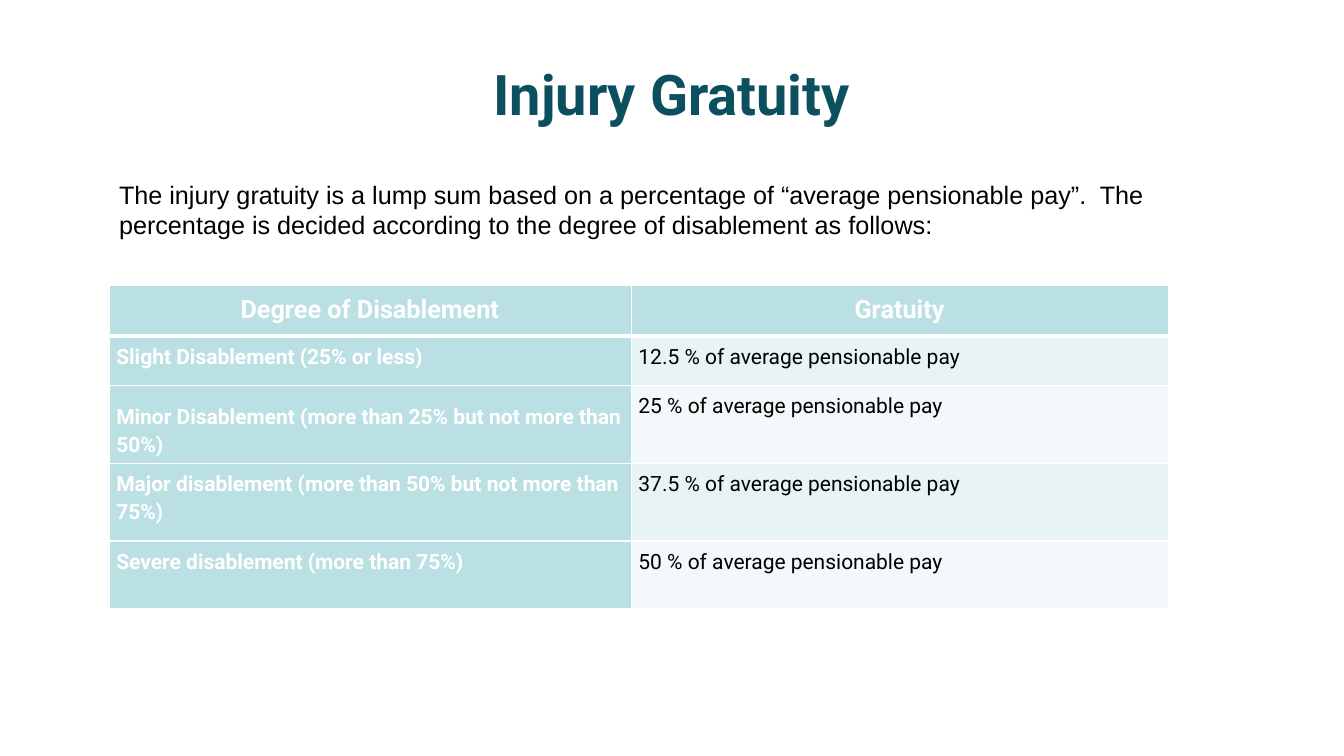
from lxml import etree
from pptx import Presentation
from pptx import util as u
from pptx.dml.color import RGBColor
from pptx.enum import text
from pptx.oxml import ns

COLORS = {
    "title": "0C5060",
    "body": "000000",
    "white": "FFFFFF",
    "header": "BBE0E3",
    "band_dark": "E7F3F4",
    "band_light": "F3F9FA",
}
INTRO = (
    "The injury gratuity is a lump sum based on a percentage of “average pensionable pay”.  "
    "The percentage is decided according to the degree of disablement as follows:"
)
ROWS = [
    ("Degree of Disablement", "Gratuity"),
    ("Slight Disablement (25% or less)", "12.5 % of average pensionable pay"),
    ("Minor Disablement (more than 25% but not more than 50%)", "25 % of average pensionable pay"),
    ("Major disablement (more than 50% but not more than 75%)", "37.5 % of average pensionable pay"),
    ("Severe disablement (more than 75%)", "50 % of average pensionable pay"),
]
BOTTOM_ROW = 2
COL_WIDTHS = (13.16, 13.54)
ROW_HEIGHTS = (1.27, 1.24, 1.96, 1.96, 1.7)


def rgb(name):
    return RGBColor.from_string(COLORS[name])


def style(p, font, size, color, bold=False):
    p.font.name = font
    p.font.size = u.Pt(size)
    p.font.bold = bold
    p.font.color.rgb = rgb(color)


def add_text(s, box, content, font, size, color, bold=False, align=text.PP_ALIGN.LEFT):
    tf = s.shapes.add_textbox(*map(u.Cm, box)).text_frame
    tf.word_wrap = True
    tf.vertical_anchor = text.MSO_ANCHOR.MIDDLE
    p = tf.paragraphs[0]
    p.text = content
    p.alignment = align
    style(p, font, size, color, bold)


def add_border(cell, side, width):
    tc_pr = cell._tc.get_or_add_tcPr()
    ln = etree.SubElement(tc_pr, ns.qn(f"a:ln{side}"), w=str(u.Pt(width)))
    fill = etree.SubElement(ln, ns.qn("a:solidFill"))
    etree.SubElement(fill, ns.qn("a:srgbClr"), val=COLORS["white"])


def fill_cell(cell, content, row, col):
    header = row == 0
    label = header or col == 0
    for side in "LRTB":
        thick = (row, side) in ((0, "B"), (1, "T"))
        add_border(cell, side, 3 if thick else 1)
    cell.fill.solid()
    band = "band_dark" if row % 2 else "band_light"
    cell.fill.fore_color.rgb = rgb("header" if label else band)
    cell.margin_left, cell.margin_right = u.Cm(0.18), u.Cm(0.2)
    cell.margin_top = cell.margin_bottom = u.Cm(0.13)
    if row == BOTTOM_ROW and col == 0:
        cell.vertical_anchor = text.MSO_ANCHOR.BOTTOM
    p = cell.text_frame.paragraphs[0]
    p.text = content
    p.line_spacing = 1.15
    p.alignment = text.PP_ALIGN.CENTER if header else text.PP_ALIGN.LEFT
    style(p, "Roboto", 18 if header else 15, "white" if label else "body", label)


def add_gratuity_table(s, left, top):
    size = (sum(COL_WIDTHS), sum(ROW_HEIGHTS))
    frame = s.shapes.add_table(len(ROWS), len(COL_WIDTHS), *map(u.Cm, (left, top, *size)))
    table = frame.table
    for column, width in zip(table.columns, COL_WIDTHS):
        column.width = u.Cm(width)
    for row, height in zip(table.rows, ROW_HEIGHTS):
        row.height = u.Cm(height)
    for r, contents in enumerate(ROWS):
        for c, content in enumerate(contents):
            fill_cell(table.cell(r, c), content, r, c)


def main():
    prs = Presentation()
    prs.slide_width, prs.slide_height = u.Cm(33.87), u.Cm(19.05)
    s = prs.slides.add_slide(prs.slide_layouts[6])
    add_text(s, (1.69, 0.76, 30.48, 3.18), "Injury Gratuity", "Roboto", 40, "title",
             bold=True, align=text.PP_ALIGN.CENTER)
    add_gratuity_table(s, 2.75, 7.2)
    add_text(s, (2.75, 4.37, 26.44, 1.8), INTRO, "Arial", 18, "body")
    prs.save("out.pptx")


if __name__ == "__main__":
    main()
